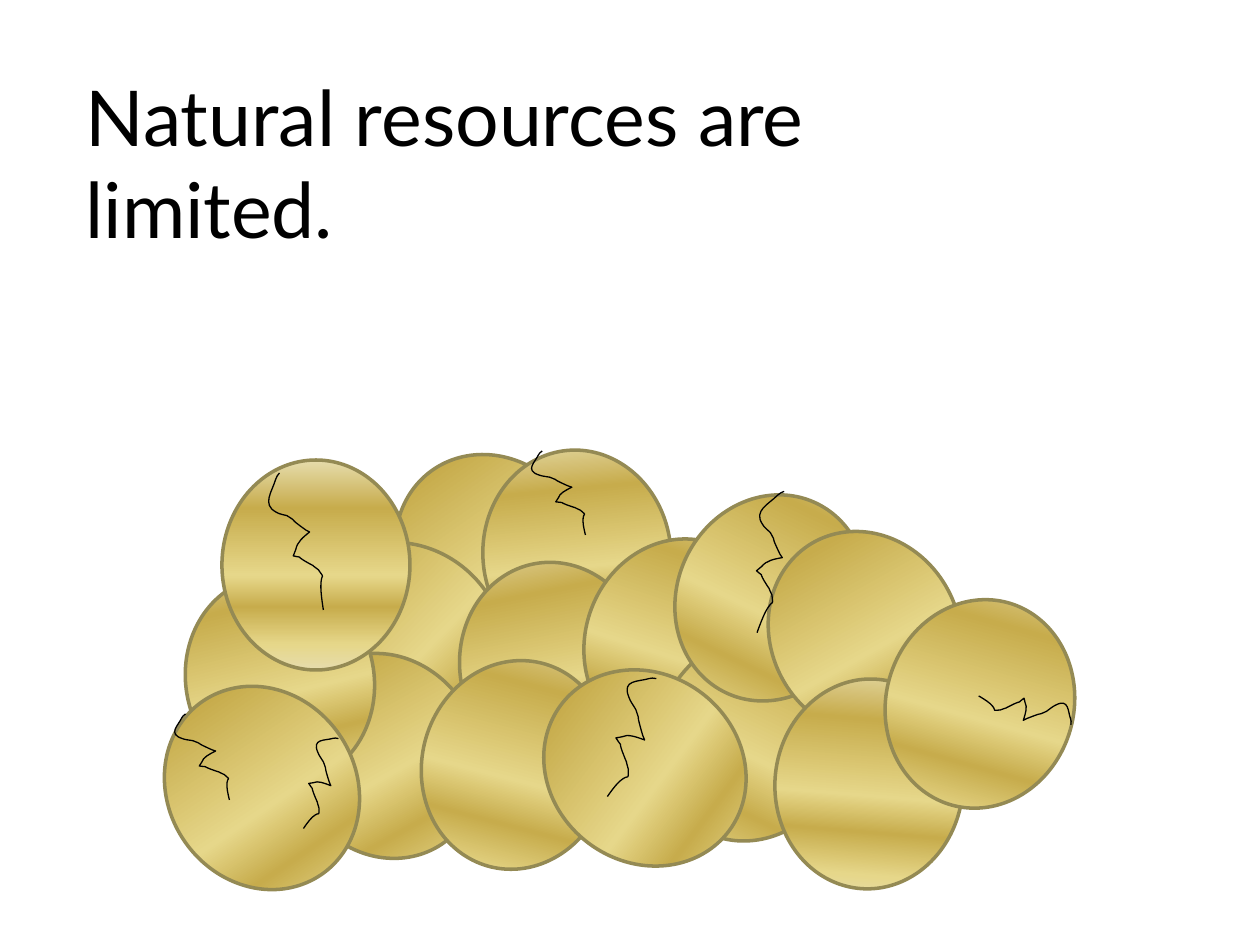
from lxml import etree
from pptx import Presentation
from pptx.dml.color import RGBColor
from pptx.enum.shapes import MSO_SHAPE
from pptx.enum.text import MSO_ANCHOR, PP_ALIGN
from pptx.oxml.ns import qn
from pptx.util import Emu, Pt

OVAL = MSO_SHAPE.OVAL
TOP = MSO_ANCHOR.TOP
LEFT = PP_ALIGN.LEFT
PX = 914400 // 126

GOLD_STOPS = [(0, "E6DCAC"), (12, "E6D78A"), (30, "C7AC4C"),
              (45, "E6D78A"), (77, "C7AC4C"), (100, "E6DCAC")]
NUGGET_SIZE = (188, 210)

# left, top, rotation; back to front
NUGGETS = [
    (399, 451, 324.6), (483, 450, 354.5), (312, 537, 314.2), (460, 562, 348.8),
    (585, 538, 17.9), (658, 633, 25.5), (677, 493, 25.5), (771, 529, 330.8),
    (291, 651, 330.8), (422, 660, 14.6), (551, 663, 306.9), (775, 679, 4.7),
    (186, 575, 346.2), (222, 460, 0), (168, 683, 325.8), (886, 599, 15.6),
]

# left, top, width, height, rotation
CRACKS = [
    (262, 473, 64, 137, 0), (732, 490, 64, 137, 28.6), (168, 714, 64, 86, 0),
    (284, 735, 64, 86, 48.3), (585, 673, 81, 115, 48.3), (525, 451, 63, 84, 0),
    (998, 662, 64, 86, 134.4),
]

# One crack in its own units: a start, then two controls and an end per curve
CRACK_START = (14, 0)
CRACK_CURVES = [
    (13, 2), (11, 3), (11, 5),
    (8, 15), (0, 25), (11, 31),
    (14, 33), (17, 33), (20, 34),
    (31, 41), (18, 33), (33, 44),
    (34, 45), (36, 46), (38, 47),
    (33, 51), (28, 55), (27, 61),
    (27, 61), (25, 66), (25, 66),
    (34, 68), (26, 65), (34, 70),
    (48, 78), (34, 69), (45, 77),
    (51, 86), (47, 77), (47, 91),
    (47, 97), (49, 109), (49, 109),
]


def px(n):
    return Emu(n * PX)


def color(value):
    return RGBColor.from_string(value)


def set_line(sp, value, width):
    sp.line.color.rgb = color(value)
    sp.line.width = Pt(width)
    sp.shadow.inherit = False


def add_text(slide, text, box, *, size, font, fill):
    tf = slide.shapes.add_textbox(*map(px, box)).text_frame
    tf.word_wrap = True
    tf.vertical_anchor = TOP
    p = tf.paragraphs[0]
    p.alignment = LEFT
    r = p.add_run()
    r.text = text
    r.font.size = Pt(size)
    r.font.name = font
    r.font.color.rgb = color(fill)


def fill_gradient(sp, stops, angle):
    """Fill with any number of (percent, colour) stops."""
    sp.fill.gradient()
    sp.fill.gradient_angle = angle
    stop_list = sp._element.spPr.find(qn("a:gradFill")).find(qn("a:gsLst"))
    for old in list(stop_list):
        stop_list.remove(old)
    for percent, value in stops:
        stop = etree.SubElement(stop_list, qn("a:gs"), pos=str(percent * 1000))
        etree.SubElement(stop, qn("a:srgbClr"), val=value)


def add_nugget(slide, left, top, rotation):
    sp = slide.shapes.add_shape(OVAL, *map(px, (left, top, *NUGGET_SIZE)))
    sp.rotation = rotation
    fill_gradient(sp, GOLD_STOPS, 90)
    set_line(sp, "948A54", 2)


def curve_outline(sp):
    """Turn each three straight segments into one cubic curve."""
    outline = next(sp._element.iter(qn("a:path")))
    segments = outline.findall(qn("a:lnTo"))
    for i in range(0, len(segments), 3):
        curve = etree.SubElement(outline, qn("a:cubicBezTo"))
        for segment in segments[i:i + 3]:
            curve.append(segment[0])
            outline.remove(segment)


def add_crack(slide, left, top, width, height, rotation):
    builder = slide.shapes.build_freeform(*CRACK_START, scale=PX)
    builder.add_line_segments(CRACK_CURVES, close=False)
    sp = builder.convert_to_shape()
    curve_outline(sp)
    sp.left, sp.top, sp.width, sp.height = map(px, (left, top, width, height))
    sp.rotation = rotation
    sp.fill.background()
    set_line(sp, "000000", 0.75)


def add_gold_pile(slide):
    for nugget in NUGGETS:
        add_nugget(slide, *nugget)
    for crack in CRACKS:
        add_crack(slide, *crack)


def main():
    prs = Presentation()
    prs.slide_width, prs.slide_height = px(1260), px(945)
    slide = prs.slides.add_slide(prs.slide_layouts[6])
    add_text(slide, "Natural resources are limited.", (73, 63, 882, 199),
             size=44, font="Lato", fill="000000")
    add_gold_pile(slide)
    prs.save("out.pptx")


if __name__ == "__main__":
    main()
